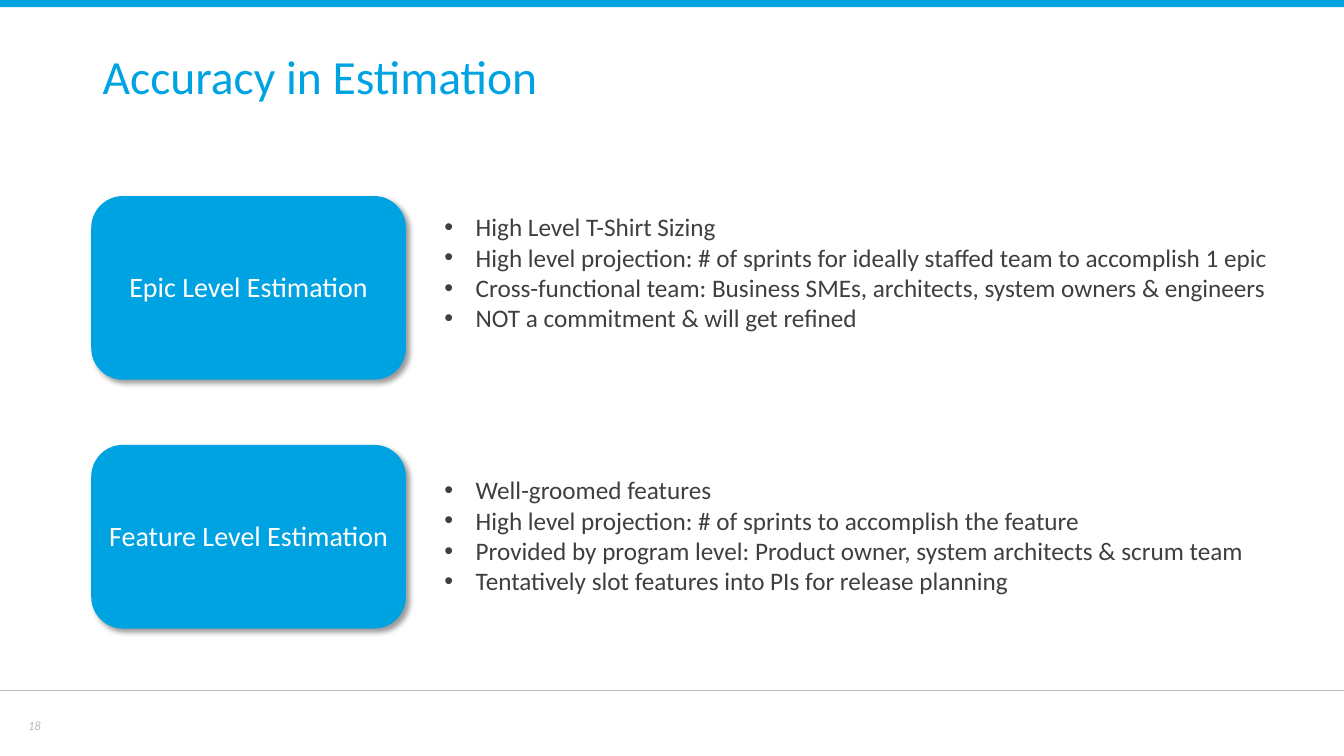
from lxml import etree
from pptx import Presentation
from pptx.dml.color import RGBColor
from pptx.enum.shapes import MSO_CONNECTOR, MSO_SHAPE
from pptx.enum.text import MSO_ANCHOR, PP_ALIGN
from pptx.oxml.ns import qn
from pptx.util import Cm, Pt

RECT, ROUND = MSO_SHAPE.RECTANGLE, MSO_SHAPE.ROUNDED_RECTANGLE
LINE = MSO_CONNECTOR.STRAIGHT
TOP, MIDDLE = MSO_ANCHOR.TOP, MSO_ANCHOR.MIDDLE
CENTER = PP_ALIGN.CENTER

# Content
TITLE = "Accuracy in Estimation"
PAGE = "18"
LEVELS = [
    {"name": "Epic Level Estimation", "top": 4.98, "list": 5.21, "points": [
        "High Level T-Shirt Sizing",
        "High level projection: # of sprints for ideally staffed team to accomplish 1 epic",
        "Cross-functional team: Business SMEs, architects, system owners & engineers",
        "NOT a commitment & will get refined",
    ]},
    {"name": "Feature Level Estimation", "top": 11.25, "list": 11.84, "points": [
        "Well-groomed features",
        "High level projection: # of sprints to accomplish the feature",
        "Provided by program level: Product owner, system architects & scrum team",
        "Tentatively slot features into PIs for release planning",
    ]},
]

# Style
COLORS = {"blue": "00A3E2", "rule": "BFBFC1", "page": "BABABA",
          "text": "3F3F3F", "white": "FFFFFF", "shade": "000000"}
FONT = "Calibri"
WIDTH, HEIGHT = 33.87, 19.05
LEFT = 2.34


def color(name):
    return RGBColor.from_string(COLORS[name])


def style(para, size, name, italic=False):
    for run in para.runs:
        font = run.font
        font.name, font.size, font.italic = FONT, Pt(size), italic
        font.color.rgb = color(name)


def add_text(slide, box, text, anchor=TOP):
    frame = slide.shapes.add_textbox(*map(Cm, box)).text_frame
    frame.word_wrap = True
    frame.vertical_anchor = anchor
    frame.text = text
    return frame


def add_block(slide, kind, box):
    shape = slide.shapes.add_shape(kind, *map(Cm, box))
    shape.shadow.inherit = False
    shape.fill.solid()
    shape.fill.fore_color.rgb = color("blue")
    shape.line.fill.background()
    return shape


def add_shadow(shape):
    effects = shape._element.spPr.find(qn("a:effectLst"))
    outer = etree.SubElement(effects, qn("a:outerShdw"), blurRad=str(Pt(4)),
                             dist=str(Pt(3)), dir=str(45 * 60000),
                             algn="tl", rotWithShape="0")
    shade = etree.SubElement(outer, qn("a:srgbClr"), val=COLORS["shade"])
    etree.SubElement(shade, qn("a:alpha"), val="40000")


def add_bullet(para):
    props = para._p.get_or_add_pPr()
    props.set("marL", str(Cm(0.79)))
    props.set("indent", str(-Cm(0.79)))
    etree.SubElement(props, qn("a:buFont"), typeface="Arial")
    etree.SubElement(props, qn("a:buChar"), char="•")


def add_level(slide, level):
    # Named card
    card = add_block(slide, ROUND, (LEFT, level["top"], 7.85, 4.55))
    card.line.color.rgb = color("blue")
    card.line.width = Pt(2.25)
    add_shadow(card)
    frame = card.text_frame
    frame.margin_left = frame.margin_right = Cm(0.1)
    frame.margin_top = frame.margin_bottom = Cm(0.1)
    frame.word_wrap = True
    frame.vertical_anchor = MIDDLE
    frame.text = level["name"]
    para = frame.paragraphs[0]
    para.alignment, para.line_spacing = CENTER, 0.95
    style(para, 20, "white")

    # Bulleted points
    box = (10.95, level["list"], 21.41, 3.33)
    for para in add_text(slide, box, "\n".join(level["points"])).paragraphs:
        add_bullet(para)
        style(para, 18, "text")


def main():
    deck = Presentation()
    deck.slide_width, deck.slide_height = Cm(WIDTH), Cm(HEIGHT)
    slide = deck.slides.add_slide(deck.slide_layouts[6])

    # Top bar and footer rule
    add_block(slide, RECT, (0, 0, WIDTH, 0.18))
    rule = slide.shapes.add_connector(LINE, Cm(0), Cm(17.4), Cm(WIDTH), Cm(17.4))
    rule.line.color.rgb = color("rule")
    rule.line.width = Pt(0.5)
    etree.SubElement(rule._element.spPr, qn("a:effectLst"))

    # Title and page number
    title = add_text(slide, (LEFT, 1.22, 30.02, 2.97), TITLE).paragraphs[0]
    title.line_spacing = 0.9
    style(title, 34, "blue")
    page = add_text(slide, (0.46, 17.78, 1.37, 1.02), PAGE, MIDDLE)
    style(page.paragraphs[0], 9, "page", italic=True)

    # Estimation levels
    for level in LEVELS:
        add_level(slide, level)

    deck.save("out.pptx")


if __name__ == "__main__":
    main()
